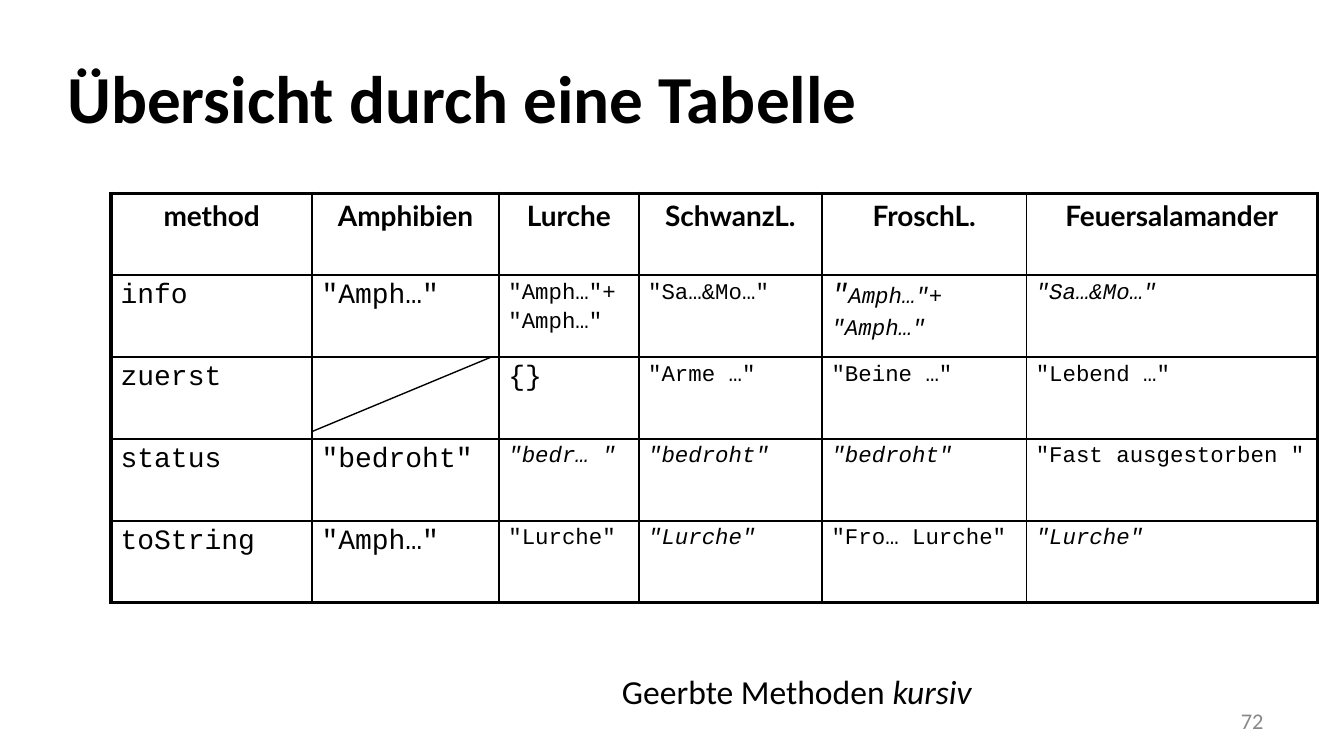
from lxml import etree
from pptx import Presentation, util as u
from pptx.dml.color import RGBColor as Rgb
from pptx.enum import shapes, text
from pptx.oxml.ns import qn

theme = dict(ink=Rgb(0, 0, 0), grey=Rgb(0x88, 0x88, 0x88), body="Calibri", head="Lato",
             code="Courier New", title=36, note=18, large=15, small=12, thick=2.25, thin=1, slash=0.75)
large, small = theme["large"], theme["small"]

deck = Presentation()
deck.slide_width = u.Inches(10)
deck.slide_height = deck.slide_width * 9 // 16
col, row = deck.slide_width / 100, deck.slide_height / 100
slide = deck.slides.add_slide(deck.slide_layouts[5])


def grid(x, y, w, h):
    return int(x * col), int(y * row), int(w * col), int(h * row)


def write(para, words, font, size, bold=False, slant=False, ink=theme["ink"]):
    run = para.add_run()
    run.text = words
    run.font.name, run.font.size = font, u.Pt(size)
    run.font.bold, run.font.italic = bold, slant
    run.font.color.rgb = ink


title = slide.shapes.title
title.left, title.top, title.width, title.height = grid(5, 4, 90, 16.7)
frame = title.text_frame
frame.margin_left = frame.margin_right = frame.margin_bottom = 0
frame.margin_top = u.Inches(0.05)
frame.vertical_anchor = text.MSO_ANCHOR.MIDDLE
frame.paragraphs[0].alignment = text.PP_ALIGN.LEFT
write(frame.paragraphs[0], "Übersicht durch eine Tabelle", theme["body"], theme["title"], True)

heads = ["method", "Amphibien", "Lurche", "SchwanzL.", "FroschL.", "Feuersalamander"]
rows = [
    [[[("info", large, False)]], [[('"Amph…"', large, False)]],
     [[('"Amph…"+', small, False)], [('"Amph…"', small, False)]],
     [[('"Sa…&Mo…"', small, False)]],
     [[('"', large, True), ('Amph…"+', small, True)], [('"Amph…"', small, True)]],
     [[('"Sa…&Mo…"', small, True)]]],
    [[[("zuerst", large, False)]], [], [[("{}", large, False)]],
     [[('"Arme …"', small, False)]], [[('"Beine …"', small, False)]],
     [[('"Lebend …"', small, False)]]],
    [[[("status", large, False)]], [[('"bedroht"', large, False)]],
     [[('"bedr… "', small, True)]], [[('"bedroht"', small, True)]],
     [[('"bedroht"', small, True)]], [[('"Fast ausgestorben "', small, False)]]],
    [[[("toString", large, False)]], [[('"Amph…"', large, False)]],
     [[('"Lurche"', small, False)]], [[('"Lurche"', small, True)]],
     [[('"Fro… Lurche"', small, False)]], [[('"Lurche"', small, True)]]],
]
cells = [[[[(head, large, False)]] for head in heads]] + rows
widths = [14.95, 13.9, 10.4, 13.65, 15.2, 21.65]
high = 10.83
last, end = len(cells) - 1, len(widths) - 1
table = slide.shapes.add_table(len(cells), len(widths),
                               *grid(8.28, 25.58, sum(widths), high * len(cells))).table
table.first_row = table.horz_banding = False
for line, width in zip(table.columns, widths):
    line.width = int(width * col)
for line in table.rows:
    line.height = int(high * row)

for r, line in enumerate(cells):
    for c, paras in enumerate(line):
        cell = table.cell(r, c)
        cell.margin_left = cell.margin_right = u.Inches(0.07)
        cell.margin_top = cell.margin_bottom = u.Inches(0.04)
        cell.fill.background()
        for n, runs in enumerate(paras):
            para = cell.text_frame.add_paragraph() if n else cell.text_frame.paragraphs[0]
            para.alignment = text.PP_ALIGN.LEFT if r else text.PP_ALIGN.CENTER
            para.space_before = u.Pt(2.4 if n else 0)
            for words, size, slant in runs:
                write(para, words, theme["code" if r else "head"], size, r == 0, slant)
        edges = [("a:lnL", c == 0), ("a:lnR", c == end), ("a:lnT", r == 0), ("a:lnB", r == last)]
        props = cell._tc.get_or_add_tcPr()
        for n, (tag, outer) in enumerate(edges):
            edge = etree.Element(qn(tag), w=str(u.Pt(theme["thick" if outer else "thin"])))
            fill = etree.SubElement(edge, qn("a:solidFill"))
            etree.SubElement(fill, qn("a:srgbClr"), val=str(theme["ink"]))
            props.insert(n, edge)

page = slide.shapes.add_textbox(*grid(71.7, 92.7, 23.3, 5.3)).text_frame
page.word_wrap = True
page.vertical_anchor = text.MSO_ANCHOR.MIDDLE
page.paragraphs[0].alignment = text.PP_ALIGN.RIGHT
write(page.paragraphs[0], "72", theme["body"], small, ink=theme["grey"])

slash = slide.shapes.add_connector(shapes.MSO_CONNECTOR.STRAIGHT, *grid(23.2, 57.1, 36.6, 47.2))
slash.line.color.rgb = theme["ink"]
slash.line.width = u.Pt(theme["slash"])
etree.SubElement(slash._element.spPr, qn("a:effectLst"))

note = slide.shapes.add_textbox(*grid(45.3, 87.9, 35.4, 7.1)).text_frame
note.word_wrap = True
note.auto_size = text.MSO_AUTO_SIZE.SHAPE_TO_FIT_TEXT
write(note.paragraphs[0], "Geerbte Methoden ", theme["body"], theme["note"])
write(note.paragraphs[0], "kursiv", theme["body"], theme["note"], slant=True)

deck.save("out.pptx")
